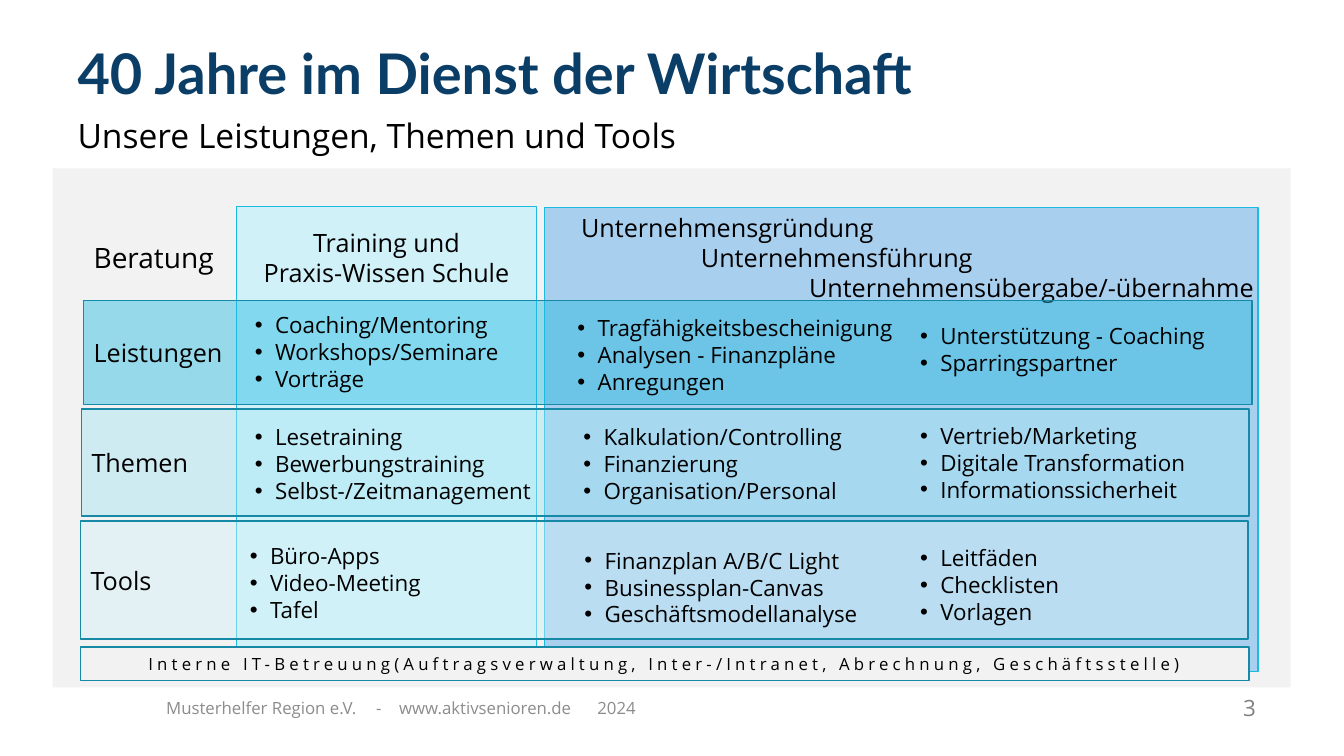
from dataclasses import dataclass
from typing import Optional

from lxml import etree
from pptx import Presentation
from pptx.dml.color import RGBColor
from pptx.enum.shapes import MSO_SHAPE as Shape
from pptx.enum.text import MSO_ANCHOR as Anchor, PP_ALIGN as Align
from pptx.oxml.ns import qn
from pptx.util import Pt

COLORS = {
    "panel": "F2F2F2", "blue": "2893E8", "cyan": "1CB9E0", "aqua": "A3E4F4",
    "ice": "D1F1F9", "edge": "1589A6", "navy": "0B3E67", "black": "000000",
    "number": "808080", "footer": "8C8C8C",
}
BULLET_INDENT = 14.4


@dataclass
class Box:
    left: float
    top: float
    width: float
    height: float


@dataclass
class Band:
    label: str
    box: Box
    fill: str


@dataclass
class BulletList:
    left: float
    top: float
    width: float
    items: list[str]


def color(name: str) -> RGBColor:
    return RGBColor.from_string(COLORS[name])


def lengths(box: Box) -> list:
    return [Pt(value) for value in (box.left, box.top, box.width, box.height)]


def add_rectangle(slide, box: Box, fill: str, line: Optional[str] = None,
                  line_width: float = 1, alpha: int = 100):
    shape = slide.shapes.add_shape(Shape.RECTANGLE, *lengths(box))
    shape.shadow.inherit = False
    shape.fill.solid()
    shape.fill.fore_color.rgb = color(fill)
    if alpha < 100:
        rgb = shape.fill._xPr.find(".//" + qn("a:srgbClr"))
        etree.SubElement(rgb, qn("a:alpha")).set("val", str(alpha * 1000))
    if line:
        shape.line.color.rgb = color(line)
        shape.line.width = Pt(line_width)
    else:
        shape.line.fill.background()
    return shape


def write(shape, lines: list[str], *, size: float = 18, font: str = "Open Sans",
          ink: str = "black", bold: bool = False, align=Align.LEFT,
          anchor=Anchor.TOP, insets=(7.2, 3.6, 7.2, 3.6), spacing: float = 1,
          tracking: float = 0, bullets: bool = False, indents=(), tabs=()):
    """Fill a shape with one paragraph per line and return its text frame."""
    frame = shape.text_frame
    frame.word_wrap = True
    frame.vertical_anchor = anchor
    (frame.margin_left, frame.margin_top,
     frame.margin_right, frame.margin_bottom) = map(Pt, insets)
    for index, line in enumerate(lines):
        paragraph = frame.paragraphs[0] if index == 0 else frame.add_paragraph()
        properties = paragraph._p.get_or_add_pPr()
        if bullets:
            properties.set("marL", str(Pt(BULLET_INDENT)))
            properties.set("indent", str(-Pt(BULLET_INDENT)))
            etree.SubElement(properties, qn("a:buFont")).set("typeface", "Arial")
            etree.SubElement(properties, qn("a:buChar")).set("char", "•")
        elif indents:
            properties.set("marL", str(Pt(indents[index])))
        if tabs:
            stops = etree.SubElement(properties, qn("a:tabLst"))
            for position in tabs:
                stop = etree.SubElement(stops, qn("a:tab"))
                stop.set("pos", str(Pt(position)))
                stop.set("algn", "l")
        paragraph.alignment = align
        paragraph.line_spacing = spacing
        run = paragraph.add_run()
        run.text = line
        run.font.name = font
        run.font.size = Pt(size)
        run.font.bold = bold
        run.font.color.rgb = color(ink)
        if tracking:
            run.font._element.set("spc", str(int(tracking * 100)))
    return frame


def add_text(slide, box: Box, lines: list[str], **text_format):
    return write(slide.shapes.add_textbox(*lengths(box)), lines, **text_format)


def add_band(slide, band: Band) -> None:
    shape = add_rectangle(slide, band.box, band.fill, "edge", alpha=43)
    write(shape, [band.label], anchor=Anchor.MIDDLE)


def add_bullets(slide, bullet_list: BulletList) -> None:
    box = Box(bullet_list.left, bullet_list.top, bullet_list.width,
              7.2 + 19.4 * len(bullet_list.items))
    add_text(slide, box, bullet_list.items, size=16, bullets=True)


BANDS = [
    Band("Leistungen", Box(59.8, 214.6, 834.5, 74.2), "cyan"),
    Band("Themen", Box(58.3, 292.3, 833.8, 76.3), "aqua"),
    Band("Tools", Box(57.6, 372.2, 833.8, 84.2), "ice"),
]

LISTS = [
    # Training
    BulletList(175, 219, 228, ["Coaching/Mentoring", "Workshops/Seminare", "Vorträge"]),
    BulletList(175, 299, 228,
               ["Lesetraining", "Bewerbungstraining", "Selbst-/Zeitmanagement"]),
    BulletList(171.4, 384, 228, ["Büro-Apps", "Video-Meeting", "Tafel"]),
    # Business, left half
    BulletList(405.4, 221, 245,
               ["Tragfähigkeitsbescheinigung", "Analysen - Finanzpläne", "Anregungen"]),
    BulletList(409.7, 299, 240,
               ["Kalkulation/Controlling", "Finanzierung", "Organisation/Personal"]),
    BulletList(410.4, 387, 240,
               ["Finanzplan A/B/C Light", "Businessplan-Canvas", "Geschäftsmodellanalyse"]),
    # Business, right half
    BulletList(650.2, 226.8, 222, ["Unterstützung - Coaching", "Sparringspartner"]),
    BulletList(650.2, 298, 222,
               ["Vertrieb/Marketing", "Digitale Transformation", "Informationssicherheit"]),
    BulletList(650.2, 385.2, 222, ["Leitfäden", "Checklisten", "Vorlagen"]),
]


def main() -> None:
    presentation = Presentation()
    presentation.slide_width, presentation.slide_height = Pt(960), Pt(540)
    slide = presentation.slides.add_slide(presentation.slide_layouts[6])

    # Heading
    add_text(slide, Box(55.4, 29.5, 849, 45.4), ["40 Jahre im Dienst der Wirtschaft"],
             size=40, font="Lato", ink="navy", bold=True, spacing=0.9,
             insets=(0, 3.6, 7.2, 3.6))
    add_text(slide, Box(55.4, 82, 847.4, 31), ["Unsere Leistungen, Themen und Tools"],
             size=24, spacing=0.9, insets=(0, 3.6, 7.2, 3.6))

    # Panel and columns
    add_rectangle(slide, Box(37.6, 120.2, 884.4, 370.8), "panel")
    business = add_rectangle(slide, Box(388.8, 148, 509.8, 331.6), "blue", "cyan",
                             0.75, alpha=36)
    frame = write(business, ["Unternehmensgründung", "Unternehmensführung",
                             "Unternehmensübergabe/-übernahme"],
                  insets=(2.9, 3.6, 2.9, 3.6), indents=(23.4, 109, 0))
    frame.paragraphs[2].alignment = Align.RIGHT
    training = add_rectangle(slide, Box(169.2, 147.6, 213.8, 331.9), "ice", "cyan", 0.75)
    write(training, ["Training und", "Praxis-Wissen Schule"], align=Align.CENTER,
          insets=(2.9, 14.4, 2.9, 3.6))
    add_text(slide, Box(59.8, 168.5, 105, 31.7), ["Beratung"], size=20)

    # Bands with their lists
    for band in BANDS:
        add_band(slide, band)
    for bullet_list in LISTS:
        add_bullets(slide, bullet_list)

    # Base bar
    base = add_rectangle(slide, Box(57.6, 462.2, 834.5, 23.8), "panel", "edge")
    write(base, ["Interne IT-Betreuung(Auftragsverwaltung, Inter-/Intranet, "
                 "Abrechnung, Geschäftsstelle)"],
          size=12, tracking=3, align=Align.CENTER, anchor=Anchor.MIDDLE)

    # Footer and slide number
    add_text(slide, Box(111.6, 491, 652.3, 28.8),
             ["Musterhelfer Region e.V.\t-\twww.aktivsenioren.de\t2024"],
             size=12, ink="footer", anchor=Anchor.MIDDLE, tabs=(150, 166.4, 308))
    add_text(slide, Box(822.2, 492.5, 82, 26.6), ["3"], size=16, ink="number",
             align=Align.RIGHT)

    presentation.save("out.pptx")


if __name__ == "__main__":
    main()
